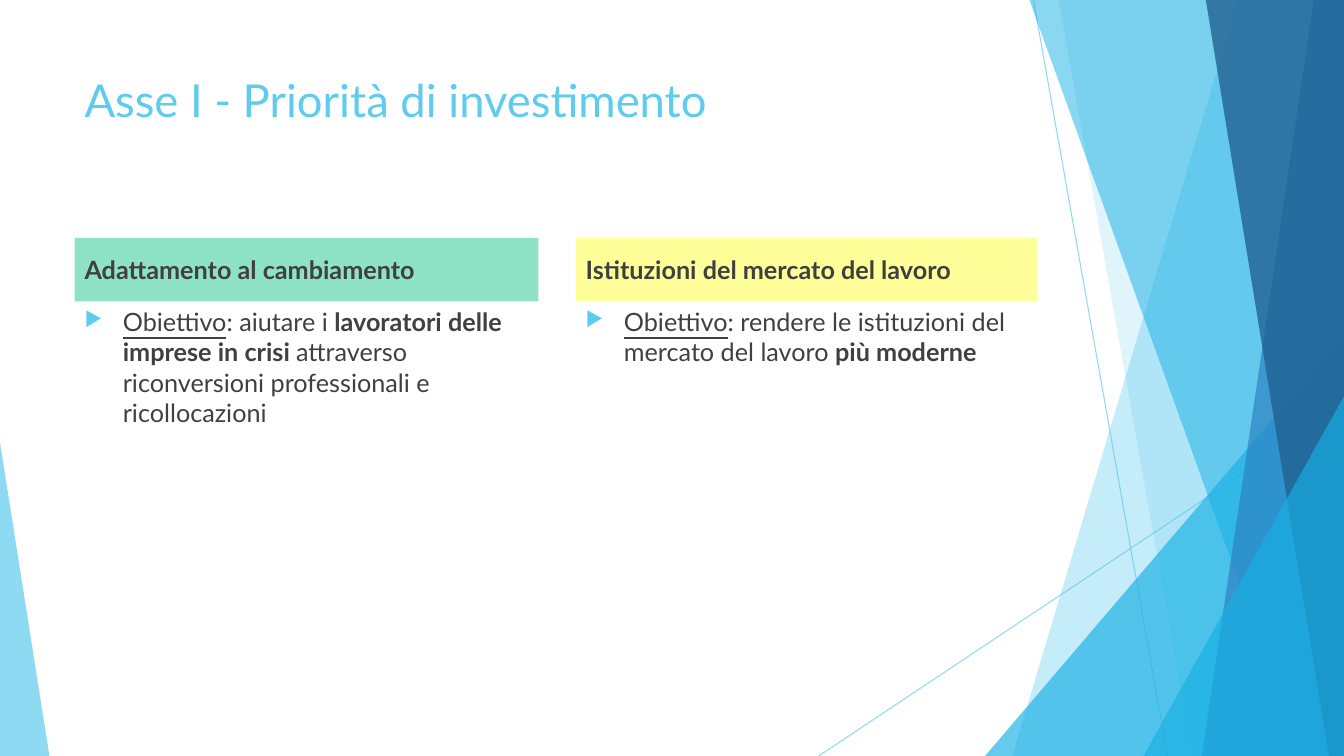
from lxml import etree
from pptx import Presentation
from pptx.dml.color import RGBColor
from pptx.enum.shapes import MSO_CONNECTOR, MSO_SHAPE
from pptx.enum.text import MSO_ANCHOR, PP_ALIGN
from pptx.oxml.ns import qn
from pptx.util import Inches, Pt

STRAIGHT = MSO_CONNECTOR.STRAIGHT
TRIANGLE = MSO_SHAPE.ISOSCELES_TRIANGLE
RECTANGLE = MSO_SHAPE.RECTANGLE
TOP, MIDDLE = MSO_ANCHOR.TOP, MSO_ANCHOR.MIDDLE
LEFT = PP_ALIGN.LEFT

TITLE = "Asse I - Priorità di investimento"
# Each run is (text, style), where style is "", "bold" or "underline".
COLUMNS = [
    {
        "left": 0.74, "width": 4.6, "body_height": 3.84, "fill": "8EE3C7",
        "heading": "Adattamento al cambiamento",
        "runs": [
            ("Obiettivo", "underline"),
            (": aiutare i ", ""),
            ("lavoratori delle imprese in crisi ", "bold"),
            ("attraverso riconversioni professionali e ricollocazioni", ""),
        ],
    },
    {
        "left": 5.71, "width": 4.58, "body_height": 1.99, "fill": "FFFF99",
        "heading": "Istituzioni del mercato del lavoro",
        "runs": [
            ("Obiettivo", "underline"),
            (": rendere le istituzioni del mercato del lavoro ", ""),
            ("più moderne", "bold"),
        ],
    },
]

THEME = {
    "font": "Lato", "title_size": 32.4, "text_size": 18,
    "sky": "5FCBEF", "cyan": "17B0E4", "blue": "2E83C3", "navy": "226292",
    "text": "404040",
}

WIDTH, HEIGHT = 13.33, 7.5
HEADING_TOP, HEADING_HEIGHT = 2.36, 0.63
BULLET_INDENT = 0.38

LINES = [((10.25, 0), (11.58, HEIGHT)), ((WIDTH, 4.03), (8.12, HEIGHT))]
# Back to front. A band is (x at the top, x at the bottom) and reaches the right
# edge; a triangle is (left, top, width, apex) and stands on the bottom edge.
DECORATION = [
    ("band", (12.28, 10.04), "sky", 36),
    ("band", (10.5, 11.83), "sky", 20),
    ("triangle", (9.77, 3.33, 3.56, 1), "cyan", 66),
    ("band", (10.21, 12.91), "cyan", 50),
    ("band", (13.03, 11.92), "blue", 70),
    ("band", (11.96, 13.18), "navy", 80),
    ("triangle", (11.34, 3.93, 1.99, 1), "cyan", 66),
    ("triangle", (0, 4.39, 0.49, 0), "sky", 70),
]


def color(value):
    return RGBColor.from_string(THEME.get(value, value))


def set_opacity(fill_parent, percent):
    for color_element in fill_parent.iter(qn("a:srgbClr")):
        alpha = etree.SubElement(color_element, qn("a:alpha"))
        alpha.set("val", str(percent * 1000))


def paint(shape, fill):
    shape.shadow.inherit = False
    shape.fill.solid()
    shape.fill.fore_color.rgb = color(fill)
    shape.line.fill.background()


def add_line(slide, start, end):
    points = [Inches(value) for value in (*start, *end)]
    line = slide.shapes.add_connector(STRAIGHT, *points)
    line.line.color.rgb = color("sky")
    line.line.width = Pt(0.75)
    properties = line._element.spPr
    set_opacity(properties, 70)
    etree.SubElement(properties, qn("a:effectLst"))


def add_band(slide, top_x, bottom_x):
    corners = [(WIDTH, 0), (WIDTH, HEIGHT), (bottom_x, HEIGHT)]
    builder = slide.shapes.build_freeform(Inches(top_x), 0)
    builder.add_line_segments([(Inches(x), Inches(y)) for x, y in corners])
    return builder.convert_to_shape()


def add_triangle(slide, left, top, width, apex):
    box = [Inches(value) for value in (left, top, width, HEIGHT - top)]
    triangle = slide.shapes.add_shape(TRIANGLE, *box)
    triangle.adjustments[0] = apex
    return triangle


def write(shape, runs, size, text_color, anchor=TOP):
    """Fill the shape with one left-aligned paragraph and return it."""
    frame = shape.text_frame
    frame.word_wrap = True
    frame.vertical_anchor = anchor
    paragraph = frame.paragraphs[0]
    paragraph.alignment = LEFT
    for text, style in runs:
        run = paragraph.add_run()
        run.text = text
        font = run.font
        font.name = THEME["font"]
        font.size = Pt(THEME[size])
        font.color.rgb = color(text_color)
        font.bold = style == "bold"
        font.underline = style == "underline"
    return paragraph


def add_bullet(paragraph):
    properties = paragraph._p.get_or_add_pPr()
    properties.set("marL", str(Inches(BULLET_INDENT)))
    properties.set("indent", str(-Inches(BULLET_INDENT)))
    bullet_color = etree.SubElement(properties, qn("a:buClr"))
    etree.SubElement(bullet_color, qn("a:srgbClr")).set("val", THEME["sky"])
    etree.SubElement(properties, qn("a:buSzPct")).set("val", "80000")
    etree.SubElement(properties, qn("a:buChar")).set("char", "▶")


def add_column(slide, column):
    left, width = Inches(column["left"]), Inches(column["width"])
    heading = slide.shapes.add_shape(
        RECTANGLE, left, Inches(HEADING_TOP), width, Inches(HEADING_HEIGHT))
    paint(heading, column["fill"])
    write(heading, [(column["heading"], "bold")], "text_size", "text", MIDDLE)
    body = slide.shapes.add_textbox(
        left, Inches(HEADING_TOP + HEADING_HEIGHT), width, Inches(column["body_height"]))
    add_bullet(write(body, column["runs"], "text_size", "text"))


def main():
    presentation = Presentation()
    presentation.slide_width = Inches(WIDTH)
    presentation.slide_height = Inches(HEIGHT)
    slide = presentation.slides.add_slide(presentation.slide_layouts[6])

    for start, end in LINES:
        add_line(slide, start, end)
    builders = {"band": add_band, "triangle": add_triangle}
    for kind, geometry, fill, opacity in DECORATION:
        shape = builders[kind](slide, *geometry)
        paint(shape, fill)
        set_opacity(shape._element.spPr, opacity)

    title = slide.shapes.add_textbox(Inches(0.74), Inches(0.67), Inches(9.4), Inches(1.44))
    write(title, [(TITLE, "")], "title_size", "sky")
    for column in COLUMNS:
        add_column(slide, column)
    presentation.save("out.pptx")


if __name__ == "__main__":
    main()
